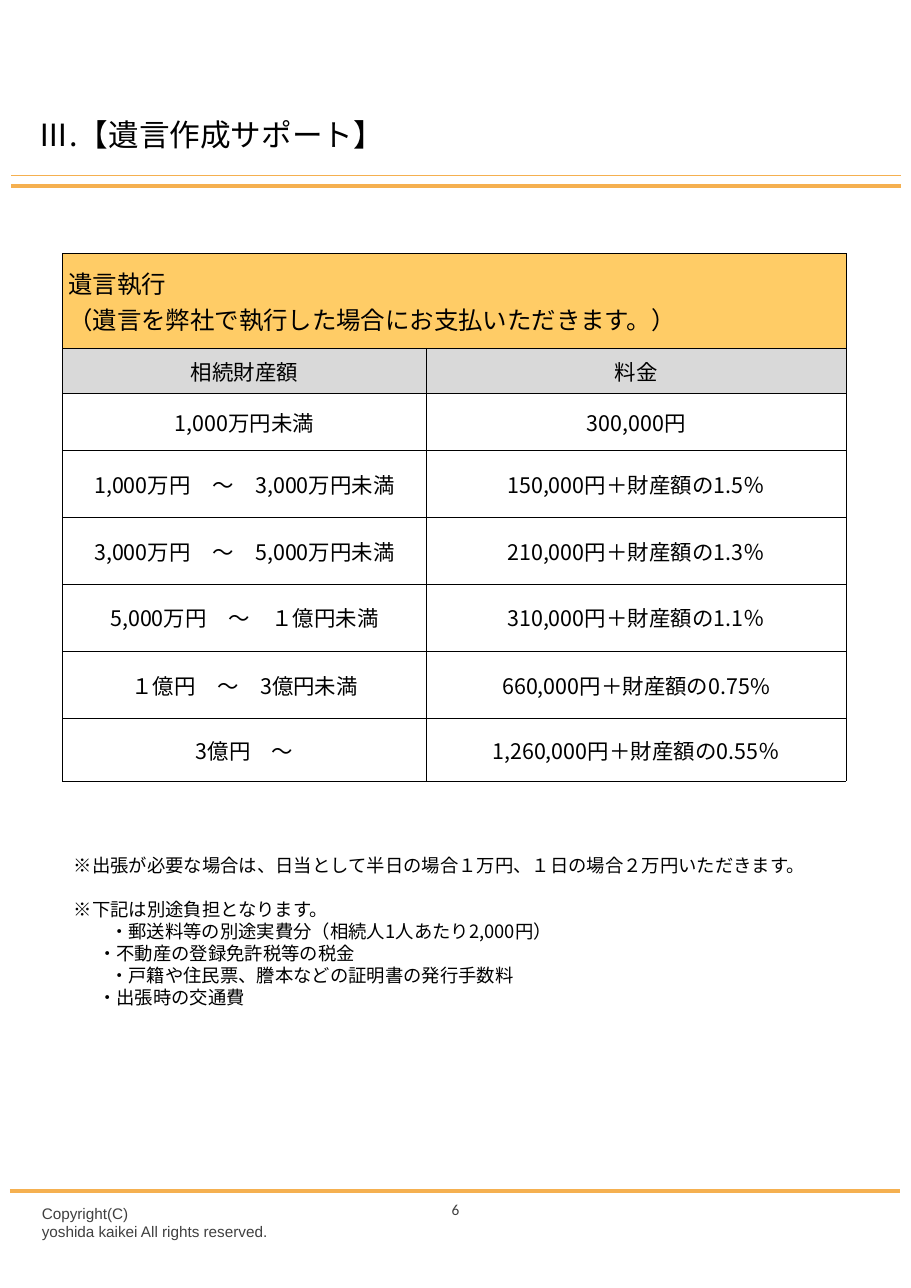
import pptx
import pptx.util
import pptx.dml.color
import pptx.enum.lang
import pptx.enum.shapes
import pptx.enum.text
import pptx.oxml.ns
from lxml import etree

Inches, Pt = pptx.util.Inches, pptx.util.Pt
ALIGN, ANCHOR = pptx.enum.text.PP_ALIGN, pptx.enum.text.MSO_ANCHOR
qn = pptx.oxml.ns.qn

GOTHIC = "Noto Sans CJK JP"
BLACK, GREY_TEXT, ORANGE = "000000", "404040", "F5B050"

TITLE = "Ⅲ.【遺言作成サポート】"
FEE_HEADING = ["遺言執行", "（遺言を弊社で執行した場合にお支払いただきます。）"]
FEES = [
    ("相続財産額", "料金"),
    ("1,000万円未満", "300,000円"),
    ("1,000万円　～　3,000万円未満", "150,000円＋財産額の1.5％"),
    ("3,000万円　～　5,000万円未満", "210,000円＋財産額の1.3％"),
    ("5,000万円　～　１億円未満", "310,000円＋財産額の1.1％"),
    ("１億円　～　3億円未満", "660,000円＋財産額の0.75%"),
    ("3億円　～", "1,260,000円＋財産額の0.55％"),
]
COLUMN_WIDTHS = [3.3, 3.81]
ROW_HEIGHTS = [0.86, 0.41, 0.52, 0.61, 0.6, 0.61, 0.61, 0.57]
# text, left indent in inches, space before in points
NOTES = [
    ("※出張が必要な場合は、日当として半日の場合１万円、１日の場合２万円いただきます。", 0, 0),
    ("※下記は別途負担となります。", 0, 14.4),
    ("・郵送料等の別途実費分（相続人1人あたり2,000円）", 0.33, 0),
    ("・不動産の登録免許税等の税金", 0.22, 0),
    ("・戸籍や住民票、謄本などの証明書の発行手数料", 0.33, 0),
    ("・出張時の交通費", 0.22, 0),
]
COPYRIGHT = ["Copyright(C)", "yoshida kaikei All rights reserved."]
PAGE_NUMBER = "6"
# left, y, width in points
RULES = [(0.1, 1.59, 0.75), (0.1, 1.69, 2.25), (0.09, 10.81, 2.25)]
RULE_LENGTH = 8.08


def rgb(value):
    return pptx.dml.color.RGBColor.from_string(value)


def apply(target, formats):
    for name, value in formats.items():
        setattr(target, name, value)


def place(shape, left, top, width, height):
    apply(shape, {"left": Inches(left), "top": Inches(top),
                  "width": Inches(width), "height": Inches(height)})


def write(frame, lines, size, face=GOTHIC, color=BLACK, align=ALIGN.LEFT):
    """Fill a text frame with one paragraph per line, in one format."""
    for number, line in enumerate(lines):
        paragraph = frame.paragraphs[0] if number == 0 else frame.add_paragraph()
        paragraph.alignment = align
        run = paragraph.add_run()
        run.text = line
        apply(run.font, {"size": Pt(size), "name": face,
                         "language_id": pptx.enum.lang.MSO_LANGUAGE_ID.JAPANESE})
        run.font.color.rgb = rgb(color)
        etree.SubElement(run.font._element, qn("a:ea")).set("typeface", face)


def set_frame(frame, side, upright, anchor=ANCHOR.TOP):
    apply(frame, {"word_wrap": True, "vertical_anchor": anchor,
                  "auto_size": pptx.enum.text.MSO_AUTO_SIZE.NONE,
                  "margin_left": Inches(side), "margin_right": Inches(side),
                  "margin_top": Inches(upright), "margin_bottom": Inches(upright)})


def format_cell(cell, fill):
    """Give a cell its fill, margins and thin black border."""
    margin = Inches(0.05)
    apply(cell, {"vertical_anchor": ANCHOR.MIDDLE,
                 "margin_left": margin, "margin_right": margin,
                 "margin_top": margin, "margin_bottom": margin})
    properties = cell._tc.get_or_add_tcPr()
    for side in ("lnL", "lnR", "lnT", "lnB"):
        border = etree.SubElement(properties, qn("a:" + side), w=str(Pt(0.5)))
        solid = etree.SubElement(border, qn("a:solidFill"))
        etree.SubElement(solid, qn("a:srgbClr"), val=BLACK)
    cell.fill.solid()
    cell.fill.fore_color.rgb = rgb(fill)


def add_rule(slide, left, y, weight):
    rule = slide.shapes.add_connector(
        pptx.enum.shapes.MSO_CONNECTOR.STRAIGHT,
        Inches(left), Inches(y), Inches(left + RULE_LENGTH), Inches(y))
    rule.line.width = Pt(weight)
    rule.line.color.rgb = rgb(ORANGE)
    etree.SubElement(rule._element.spPr, qn("a:effectLst"))


def add_label(slide, box, margins, lines, face, align):
    label = slide.shapes.add_textbox(*map(Inches, box))
    set_frame(label.text_frame, *margins)
    write(label.text_frame, lines, 10, face, GREY_TEXT, align)


def add_fee_table(slide):
    fees = slide.shapes.add_table(
        len(ROW_HEIGHTS), len(COLUMN_WIDTHS), Inches(0.57), Inches(2.3),
        Inches(sum(COLUMN_WIDTHS)), Inches(sum(ROW_HEIGHTS))).table
    apply(fees, {"first_row": False, "horz_banding": False})
    for column, width in zip(fees.columns, COLUMN_WIDTHS):
        column.width = Inches(width)
    for row, height in zip(fees.rows, ROW_HEIGHTS):
        row.height = Inches(height)

    fills = ["FFCC66", "D9D9D9"] + ["FFFFFF"] * (len(FEES) - 1)
    for row, fill in zip(fees.rows, fills):
        for cell in row.cells:
            format_cell(cell, fill)
    heading = fees.cell(0, 0)
    heading.merge(fees.cell(0, 1))
    write(heading.text_frame, FEE_HEADING, 16)
    for row_number, fee in enumerate(FEES, start=1):
        for column_number, text in enumerate(fee):
            write(fees.cell(row_number, column_number).text_frame, [text], 14,
                  align=ALIGN.CENTER)


def fill_notes(notes):
    place(notes, 0.57, 7.71, 7.57, 2.23)
    set_frame(notes.text_frame, 0.1, 0.04)
    write(notes.text_frame, [text for text, _, _ in NOTES], 12)
    for paragraph, (_, indent, before) in zip(notes.text_frame.paragraphs, NOTES):
        apply(paragraph, {"line_spacing": Pt(14.4), "space_before": Pt(before)})
        properties = paragraph._p.get_or_add_pPr()
        properties.set("marL", str(Inches(indent)))
        properties.set("indent", "0")
        etree.SubElement(properties, qn("a:buNone"))


def main():
    deck = pptx.Presentation()
    apply(deck, {"slide_width": Inches(8.27), "slide_height": Inches(11.69)})
    slide = deck.slides.add_slide(deck.slide_layouts[1])

    title = slide.shapes.title
    place(title, 0.25, 1, 4.91, 0.44)
    set_frame(title.text_frame, 0.1, 0.05, ANCHOR.MIDDLE)
    write(title.text_frame, [TITLE], 20)

    fill_notes(slide.placeholders[1])
    for rule in RULES:
        add_rule(slide, *rule)
    add_fee_table(slide)
    add_label(slide, (0.27, 10.87, 2.76, 0.45), (0.11, 0.06), COPYRIGHT,
              "Arial", ALIGN.LEFT)
    add_label(slide, (3.17, 10.84, 1.93, 0.62), (0.1, 0.05), [PAGE_NUMBER],
              "Calibri", ALIGN.CENTER)
    deck.save("out.pptx")


if __name__ == "__main__":
    main()
